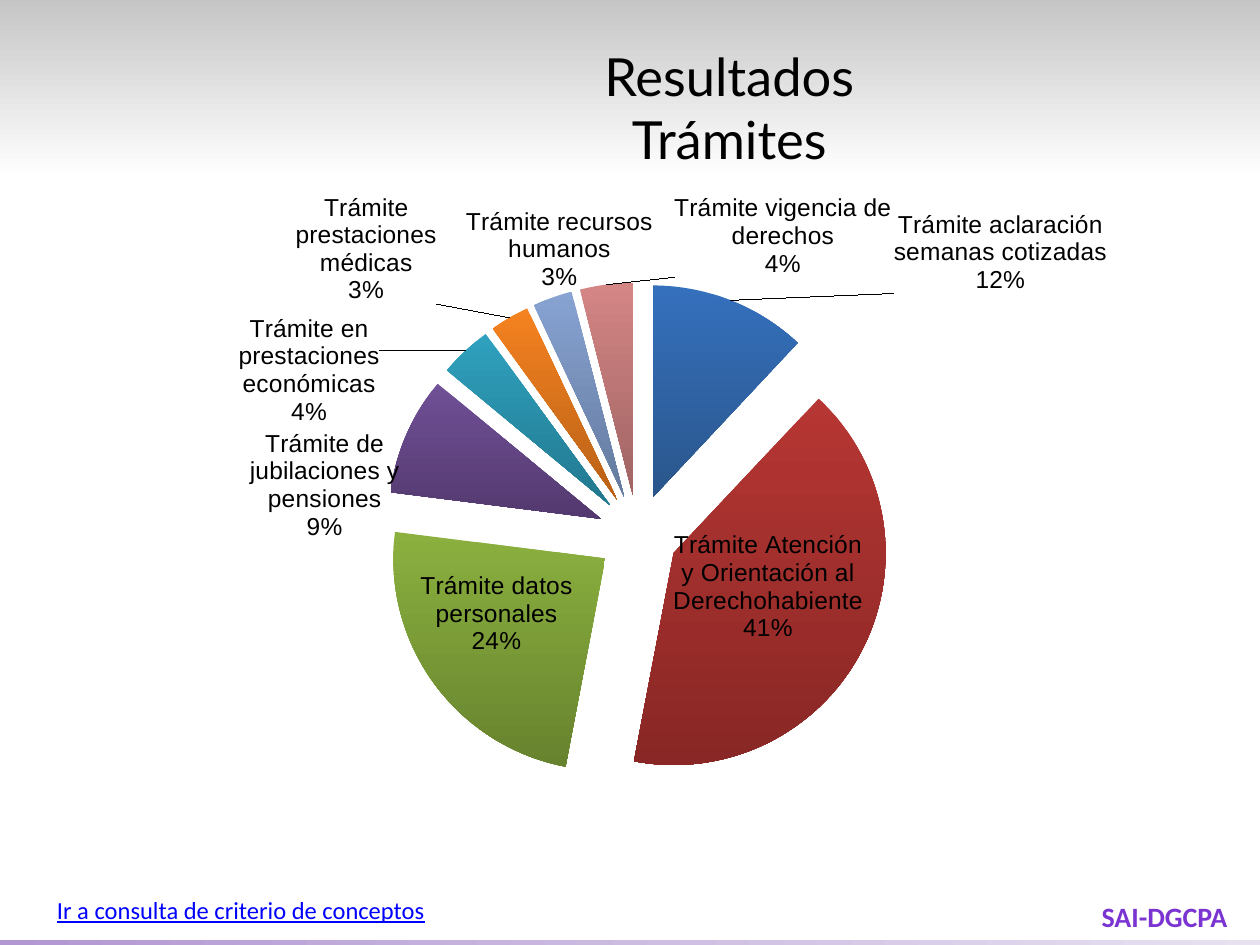
"""Build the slide of procedure results with its exploded pie chart."""
from dataclasses import dataclass

from lxml import etree
from pptx import Presentation
from pptx.chart.data import CategoryChartData as ChartData
from pptx.dml.color import RGBColor as RGB
from pptx.enum.chart import XL_CHART_TYPE as ChartType
from pptx.enum.shapes import MSO_SHAPE as Shape
from pptx.enum.text import MSO_ANCHOR as Anchor, PP_ALIGN as Align
from pptx.oxml import parse_xml
from pptx.oxml.ns import nsdecls, qn
from pptx.util import Pt


@dataclass(frozen=True)
class Theme:
    black: str = "000000"
    link: str = "0000FF"
    brand: str = "7B34D2"
    header: tuple = ("C0C0C0", "FFFFFF")
    footer: tuple = ("B197D2", "E7E1F0")
    title_font: str = "Lato"
    text_font: str = "Calibri"
    chart_font: str = "Arial"
    title_size: int = 30
    brand_size: int = 16
    text_size: int = 14


@dataclass(frozen=True)
class Slice:
    name: str
    value: int
    colors: tuple
    pos: str
    dx: float
    dy: float


SLICES = [
    Slice("Trámite aclaración semanas cotizadas", 12, ("3570BD", "2A568B"), "outEnd", 0.14, 0),
    Slice("Trámite Atención y Orientación al Derechohabiente", 41, ("B63633", "882725"), "ctr", 0, -0.02),
    Slice("Trámite datos personales", 24, ("8BB03F", "67832E"), "ctr", -0.02, -0.01),
    Slice("Trámite de jubilaciones y pensiones", 9, ("705096", "53396F"), "outEnd", 0, 0.15),
    Slice("Trámite en prestaciones económicas", 4, ("2FA1BF", "22788E"), "outEnd", -0.07, 0.11),
    Slice("Trámite prestaciones médicas", 3, ("F58220", "B86117"), "outEnd", -0.06, -0.01),
    Slice("Trámite recursos humanos", 3, ("87A3D2", "647A9E"), "outEnd", 0.09, 0),
    Slice("Trámite vigencia de derechos", 4, ("D48685", "9F6463"), "outEnd", 0.25, 0),
]

FLAGS = "".join(
    f'<c:show{name} val="{val}"/>'
    for name, val in (("LegendKey", 0), ("Val", 0), ("CatName", 1),
                      ("SerName", 0), ("Percent", 1), ("BubbleSize", 0))
) + "<c:separator>\n</c:separator>"


def label_xml(i, item):
    return (
        f'<c:dLbl><c:idx val="{i}"/><c:layout><c:manualLayout>'
        f'<c:x val="{item.dx}"/><c:y val="{item.dy}"/></c:manualLayout></c:layout>'
        f'<c:dLblPos val="{item.pos}"/>{FLAGS}</c:dLbl>'
    )


class Builder:
    def __init__(self, slide, theme):
        self.s, self.theme = slide, theme

    def gradient(self, fill, colors, angle):
        fill.gradient()
        fill.gradient_angle = angle
        for stop, color in zip(fill.gradient_stops, colors):
            stop.color.rgb = RGB.from_string(color)

    def format(self, p, font, size, color, align=Align.LEFT):
        p.alignment = align
        p.font.name, p.font.size = font, Pt(size)
        p.font.color.rgb = RGB.from_string(color)

    def band(self, box, colors, angle):
        sp = self.s.shapes.add_shape(Shape.RECTANGLE, *map(Pt, box))
        sp.shadow.inherit = False
        sp.line.fill.background()
        self.gradient(sp.fill, colors, angle)
        self.s.shapes._spTree.insert(2, sp._element)

    def title(self, box, lines):
        sp = self.s.shapes.title
        sp.left, sp.top, sp.width, sp.height = map(Pt, box)
        tf = sp.text_frame
        tf.text = "\n".join(lines)
        tf.vertical_anchor = Anchor.TOP
        for p in tf.paragraphs:
            self.format(p, self.theme.title_font, self.theme.title_size, self.theme.black, Align.CENTER)

    def text(self, box, text, size, color, align=Align.LEFT, bold=False, underline=False):
        tf = self.s.shapes.add_textbox(*map(Pt, box)).text_frame
        tf.word_wrap = True
        p = tf.paragraphs[0]
        p.text = text
        self.format(p, self.theme.text_font, size, color, align)
        p.font.bold, p.font.underline = bold, underline

    def pie(self, box, slices, explosion, plot_box):
        data = ChartData()
        data.categories = [item.name for item in slices]
        data.add_series("Series 1", [item.value for item in slices])
        chart = self.s.shapes.add_chart(ChartType.PIE, *map(Pt, box), data).chart
        chart.has_title = chart.has_legend = False
        chart.font.name, chart.font.size = self.theme.chart_font, Pt(self.theme.text_size)
        chart.font.color.rgb = RGB.from_string(self.theme.black)
        plot = chart.plots[0]
        plot.vary_by_categories = True
        series = plot.series[0]
        for i, item in enumerate(slices):
            fmt = series.points[i].format
            self.gradient(fmt.fill, item.colors, 270)
            fmt.line.fill.background()
        ser = series._element
        burst = etree.Element(qn("c:explosion"), val=str(explosion))
        ser.find(qn("c:dPt")).addprevious(burst)
        labels = "".join(label_xml(i, item) for i, item in enumerate(slices))
        ser.find(qn("c:cat")).addprevious(parse_xml(
            f'<c:dLbls {nsdecls("c")}>{labels}<c:dLblPos val="outEnd"/>{FLAGS}'
            '<c:showLeaderLines val="1"/></c:dLbls>'))
        self.place_plot(chart, plot_box)

    def place_plot(self, chart, plot_box):
        area = chart._chartSpace.find(f".//{qn('c:plotArea')}")
        for old in area.findall(qn("c:layout")):
            area.remove(old)
        sizes = "".join(f'<c:{k} val="{v}"/>' for k, v in zip("xywh", plot_box))
        area.insert(0, parse_xml(
            f'<c:layout {nsdecls("c")}><c:manualLayout><c:layoutTarget val="inner"/>'
            f'<c:xMode val="edge"/><c:yMode val="edge"/>{sizes}</c:manualLayout></c:layout>'))


def main():
    theme = Theme()
    prs = Presentation()
    prs.slide_width, prs.slide_height = Pt(720), Pt(540)
    b = Builder(prs.slides.add_slide(prs.slide_layouts[5]), theme)
    b.band((0, -10, 720, 111.5), theme.header, 270)
    b.band((0, 537, 720, 6), theme.footer, 0)
    b.text((592.5, 510.5, 116, 26.5), "SAI-DGCPA", theme.brand_size, theme.brand, Align.RIGHT, bold=True)
    b.title((150, 21.5, 533.5, 68.5), ["Resultados", "Trámites"])
    b.pie((37, 94.5, 655, 414), SLICES, 19, (0.28, 0.16, 0.44, 0.7))
    b.text((25.5, 508, 227, 24.5), "Ir a consulta de criterio de conceptos", theme.text_size, theme.link, underline=True)
    prs.save("out.pptx")


if __name__ == "__main__":
    main()
